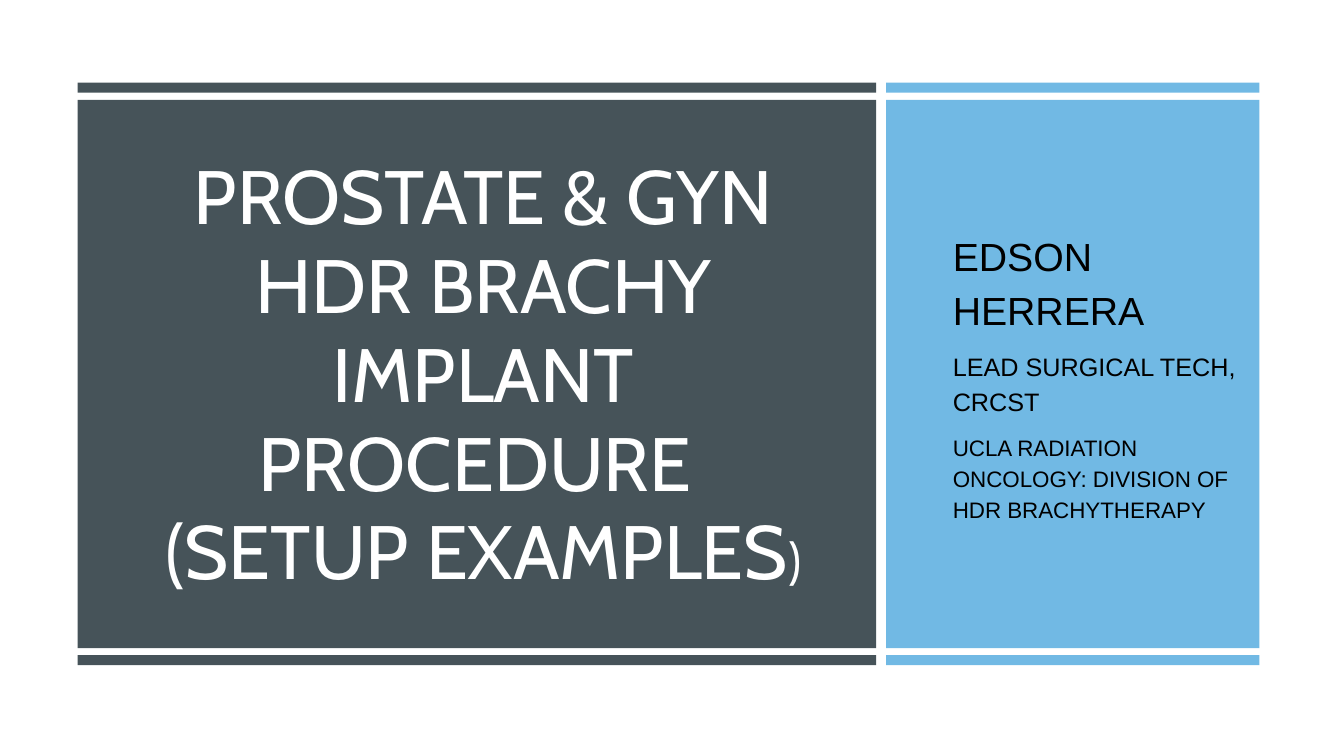
import pptx
import pptx.util
import pptx.dml.color
import pptx.enum.shapes
import pptx.enum.text

Inches = pptx.util.Inches
Pt = pptx.util.Pt
PP_ALIGN = pptx.enum.text.PP_ALIGN
COLORS = {"slate": "465359", "sky": "71B9E4", "white": "FFFFFF", "black": "000000"}


def rgb(name):
    return pptx.dml.color.RGBColor.from_string(COLORS[name])


def write(paragraph, text, size, font, color, align):
    """Append text to the paragraph, turning each newline into a line break."""
    paragraph.alignment = align
    for index, line in enumerate(text.split("\n")):
        if index:
            paragraph.add_line_break()
        run = paragraph.add_run()
        run.text = line
        run.font.size = Pt(size)
        run.font.name = font
        run.font.color.rgb = rgb(color)


presentation = pptx.Presentation()
presentation.slide_width = Inches(13.33)
presentation.slide_height = Inches(7.5)
slide = presentation.slides.add_slide(presentation.slide_layouts[0])
slide.background.fill.solid()
slide.background.fill.fore_color.rgb = rgb("white")
title, presenter = slide.placeholders

# Two panels, each with a thin bar above and below, behind the text
for left, width, color in [(0.77, 7.92, "slate"), (8.79, 3.7, "sky")]:
    for top, height in [(0.99, 5.44), (0.82, 0.1), (6.5, 0.1)]:
        panel = slide.shapes.add_shape(
            pptx.enum.shapes.MSO_SHAPE.RECTANGLE,
            Inches(left), Inches(top), Inches(width), Inches(height))
        panel.shadow.inherit = False
        panel.fill.solid()
        panel.fill.fore_color.rgb = rgb(color)
        panel.line.fill.background()
        title.element.addprevious(panel.element)

for holder, left, top, width, height in [(title, 1.27, 1.28, 7.05, 4.89),
                                         (presenter, 9.38, 2.26, 3.01, 2.9)]:
    holder.left, holder.top = Inches(left), Inches(top)
    holder.width, holder.height = Inches(width), Inches(height)
    holder.text_frame.word_wrap = True
    holder.text_frame.auto_size = pptx.enum.text.MSO_AUTO_SIZE.NONE
    holder.text_frame.vertical_anchor = pptx.enum.text.MSO_ANCHOR.MIDDLE

heading = title.text_frame.paragraphs[0]
heading.line_spacing = 0.98
for text, size in [("PROSTATE & GYN HDR BRACHY IMPLANT\nPROCEDURE \n(SETUP EXAMPLES", 54),
                   (")", 36)]:
    write(heading, text, size=size, font="Cabin", color="white", align=PP_ALIGN.CENTER)

presenter.text_frame.margin_left = presenter.text_frame.margin_right = Inches(0.07)
presenter_lines = [
    ("EDSON HERRERA", 28),
    ("LEAD SURGICAL TECH, CRCST", 18),
    ("UCLA RADIATION ONCOLOGY: DIVISION OF HDR BRACHYTHERAPY", 16),
]
for index, (text, size) in enumerate(presenter_lines):
    frame = presenter.text_frame
    paragraph = frame.add_paragraph() if index else frame.paragraphs[0]
    paragraph.line_spacing = 1.15
    paragraph.space_before = Pt(4 if index else 0)
    paragraph.space_after = Pt(6)
    write(paragraph, text, size=size, font="Arial", color="black", align=PP_ALIGN.LEFT)

presentation.save("out.pptx")
